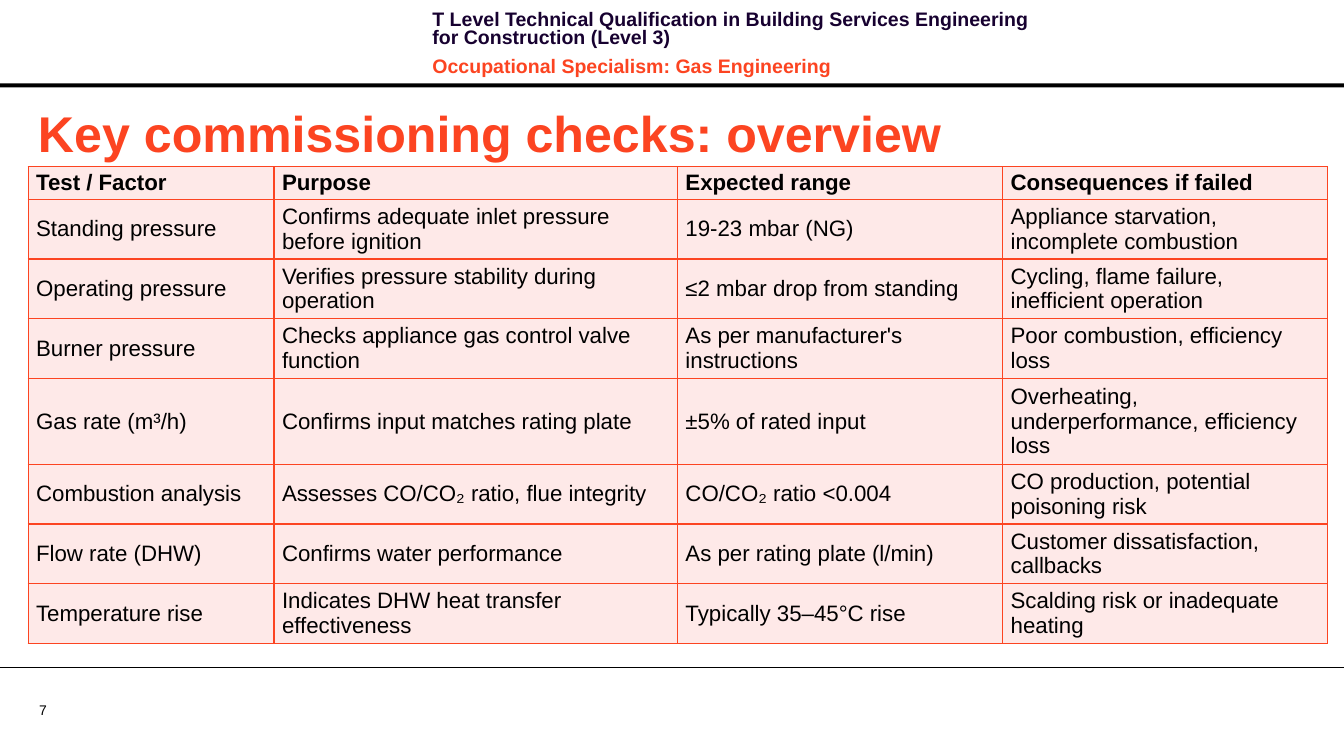
from lxml import etree
from pptx import Presentation
from pptx import util as u
from pptx.dml.color import RGBColor
from pptx.enum import shapes, text
from pptx.oxml import ns

PX = 9144  # 100 px to the inch
COLORS = {"black": "000000", "navy": "170130", "orange": "FC4421", "blush": "FEE9E8"}


def style(paragraph, size, color, bold=False):
    for run in paragraph.runs:
        run.font.name = "Arial"
        run.font.size = u.Pt(size)
        run.font.bold = bold
        run.font.color.rgb = RGBColor.from_string(COLORS[color])


def add_text_box(left, top, width, height, lines, anchor):
    box = slide.shapes.add_textbox(left * PX, top * PX, width * PX, height * PX)
    frame = box.text_frame
    frame.word_wrap = True
    frame.vertical_anchor = anchor
    frame.text = "\n".join(lines)
    return frame


presentation = Presentation()
presentation.slide_width = 1339 * PX
presentation.slide_height = 748 * PX
slide = presentation.slides.add_slide(presentation.slide_layouts[6])

# Header bar
bar = slide.shapes.add_shape(shapes.MSO_SHAPE.RECTANGLE, 0, 83 * PX, 1339 * PX, 4 * PX)
bar.shadow.inherit = False
bar.fill.solid()
bar.fill.fore_color.rgb = RGBColor.from_string(COLORS["black"])
bar.line.fill.background()

# Page number
number = add_text_box(39, 699, 64, 17, ["7"], text.MSO_ANCHOR.MIDDLE)
number.margin_left = number.margin_right = number.margin_top = number.margin_bottom = 0
style(number.paragraphs[0], 10, "black")

# Footer line
footer = slide.shapes.add_connector(shapes.MSO_CONNECTOR.STRAIGHT, 0, 665 * PX, 1339 * PX, 665 * PX)
footer.line.color.rgb = RGBColor.from_string(COLORS["black"])
footer.line.width = u.Pt(0.75)
etree.SubElement(footer._element.spPr, ns.qn("a:effectLst"))

# Course heading
heading = add_text_box(421, 7, 637, 64, [
    "T Level Technical Qualification in Building Services Engineering for Construction (Level 3)",
    "Occupational Specialism: Gas Engineering",
], text.MSO_ANCHOR.TOP)
for paragraph, color in zip(heading.paragraphs, ("navy", "orange")):
    paragraph.line_spacing = u.Pt(13.1)
    paragraph.space_after = u.Pt(4)
    style(paragraph, 14, color, bold=True)
heading.paragraphs[1].space_before = u.Pt(4)

# Title
title = add_text_box(28, 96, 1272, 71, ["Key commissioning checks: overview"], text.MSO_ANCHOR.MIDDLE)
style(title.paragraphs[0], 36, "orange", bold=True)

# Table of checks
checks = [
    ("Test / Factor", "Purpose", "Expected range", "Consequences if failed"),
    ("Standing pressure", "Confirms adequate inlet pressure before ignition",
     "19-23 mbar (NG)", "Appliance starvation, incomplete combustion"),
    ("Operating pressure", "Verifies pressure stability during operation",
     "≤2 mbar drop from standing", "Cycling, flame failure, inefficient operation"),
    ("Burner pressure", "Checks appliance gas control valve function",
     "As per manufacturer's instructions", "Poor combustion, efficiency loss"),
    ("Gas rate (m³/h)", "Confirms input matches rating plate",
     "±5% of rated input", "Overheating, underperformance, efficiency loss"),
    ("Combustion analysis", "Assesses CO/CO₂ ratio, flue integrity",
     "CO/CO₂ ratio <0.004", "CO production, potential poisoning risk"),
    ("Flow rate (DHW)", "Confirms water performance",
     "As per rating plate (l/min)", "Customer dissatisfaction, callbacks"),
    ("Temperature rise", "Indicates DHW heat transfer effectiveness",
     "Typically 35–45°C rise", "Scalding risk or inadequate heating"),
]
column_widths = [245, 402, 324, 324]
row_heights = [32, 57, 57, 57, 82, 57, 57, 57]
table = slide.shapes.add_table(
    len(checks), len(column_widths), 28 * PX, 166 * PX,
    sum(column_widths) * PX, sum(row_heights) * PX).table
for column, width in zip(table.columns, column_widths):
    column.width = width * PX
for row, height in zip(table.rows, row_heights):
    row.height = height * PX

for row_index, check in enumerate(checks):
    for column_index, wording in enumerate(check):
        cell = table.cell(row_index, column_index)
        cell.text_frame.text = wording
        cell.vertical_anchor = text.MSO_ANCHOR.MIDDLE
        cell.margin_left = cell.margin_right = 8 * PX
        cell.margin_top = cell.margin_bottom = 3 * PX
        cell.fill.solid()
        cell.fill.fore_color.rgb = RGBColor.from_string(COLORS["blush"])
        style(cell.text_frame.paragraphs[0], 16, "black", bold=row_index == 0)
        # Borders come before the fill in the cell properties
        properties = cell._tc.get_or_add_tcPr()
        for position, side in enumerate(("lnL", "lnR", "lnT", "lnB")):
            border = etree.Element(ns.qn(f"a:{side}"), w=str(u.Pt(1)))
            fill = etree.SubElement(border, ns.qn("a:solidFill"))
            etree.SubElement(fill, ns.qn("a:srgbClr"), val=COLORS["orange"])
            properties.insert(position, border)

presentation.save("out.pptx")
